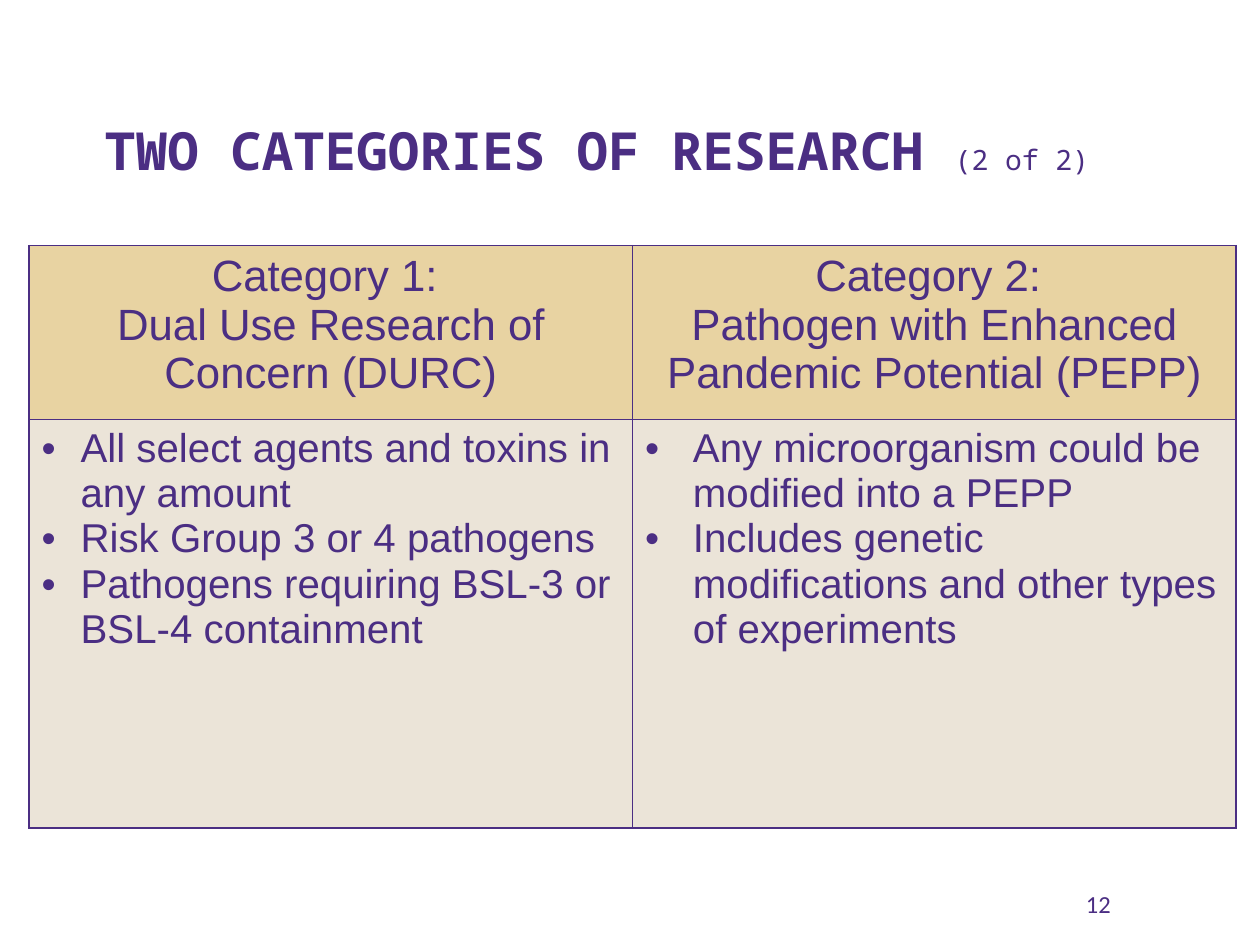
"""Build a slide that compares two categories of research in a table."""
import dataclasses

import pptx
import pptx.dml.color
import pptx.enum.text
import pptx.oxml
import pptx.oxml.ns
import pptx.util

ALIGN = pptx.enum.text.PP_ALIGN
ANCHOR = pptx.enum.text.MSO_ANCHOR


@dataclasses.dataclass(frozen=True)
class Theme:
    """Colours, fonts and type sizes of the deck."""

    ink: str = "4B2E83"
    header_fill: str = "E8D3A2"
    body_fill: str = "EBE4D8"
    title_font: str = "Noto Sans Mono"
    table_font: str = "Arial"
    number_font: str = "Calibri"
    title_size: int = 30
    part_size: int = 16
    header_size: int = 25
    body_size: int = 23
    number_size: int = 14
    border_width: int = 1


class SlideBuilder:
    """Hold the theme and current slide, placing elements on a 100 by 75 grid."""

    def __init__(self, deck, theme):
        """Add a blank slide and measure its grid."""
        self.theme = theme
        self.page = deck.slides.add_slide(deck.slide_layouts[6])
        self.column = deck.slide_width / 100
        self.row = deck.slide_height / 75

    def place(self, left, top, width, height):
        """Turn grid columns and rows into lengths."""
        across, down = self.column, self.row
        return [round(size) for size in (left * across, top * down, width * across, height * down)]

    def span(self, para, text, font, size, bold=False):
        """Add a styled run to a paragraph."""
        span = para.add_run()
        span.text = text
        formats = {"name": font, "size": pptx.util.Pt(size), "bold": bold}
        for name, value in formats.items():
            setattr(span.font, name, value)
        span.font.color.rgb = pptx.dml.color.RGBColor.from_string(self.theme.ink)

    def text(self, place, spans, anchor=ANCHOR.TOP):
        """Add a one-paragraph text box made of several spans."""
        frame = self.page.shapes.add_textbox(*self.place(*place)).text_frame
        formats = {"word_wrap": True, "vertical_anchor": anchor}
        for name, value in formats.items():
            setattr(frame, name, value)
        for span in spans:
            self.span(frame.paragraphs[0], *span)

    def bullet(self, para, indent):
        """Give a paragraph a hanging bullet."""
        properties = para._p.get_or_add_pPr()
        length = pptx.util.Inches(indent)
        for name, value in {"marL": length, "indent": -length}.items():
            properties.set(name, str(value))
        space = pptx.oxml.ns.nsdecls("a")
        for xml in (
            f'<a:buClr {space}><a:srgbClr val="{self.theme.ink}"/></a:buClr>',
            f'<a:buFont {space} typeface="{self.theme.table_font}"/>',
            f'<a:buChar {space} char="•"/>',
        ):
            properties.append(pptx.oxml.parse_xml(xml))

    def cell(self, cell, lines, fill, size, indent=None):
        """Fill a bordered cell with centred lines, or bullets when indented."""
        cell.fill.solid()
        cell.fill.fore_color.rgb = pptx.dml.color.RGBColor.from_string(fill)
        properties = cell._tc.get_or_add_tcPr()
        width = pptx.util.Pt(self.theme.border_width)
        for index, side in enumerate("LRTB"):
            properties.insert(index, pptx.oxml.parse_xml(
                f'<a:ln{side} {pptx.oxml.ns.nsdecls("a")} w="{width}"><a:solidFill>'
                f'<a:srgbClr val="{self.theme.ink}"/></a:solidFill></a:ln{side}>'))
        frame = cell.text_frame
        for index, line in enumerate(lines):
            para = frame.add_paragraph() if index else frame.paragraphs[0]
            if indent:
                self.bullet(para, indent)
            else:
                para.alignment = ALIGN.CENTER
            self.span(para, line, self.theme.table_font, size)

    def table(self, place, heights, categories):
        """Add a table with one column for each category."""
        shape = self.page.shapes.add_table(len(heights), len(categories), *self.place(*place))
        table = shape.table
        for row, height in zip(table.rows, heights):
            row.height = round(height * self.row)
        theme = self.theme
        for column, (header, points, indent) in enumerate(categories):
            self.cell(table.cell(0, column), header, theme.header_fill, theme.header_size)
            self.cell(table.cell(1, column), points, theme.body_fill, theme.body_size, indent)


CATEGORIES = [
    (
        ["Category 1: ", "Dual Use Research of Concern (DURC)"],
        [
            "All select agents and toxins in any amount",
            "Risk Group 3 or 4 pathogens",
            "Pathogens requiring BSL-3 or BSL-4 containment",
        ],
        0.31,
    ),
    (
        ["Category 2: ", "Pathogen with Enhanced Pandemic Potential (PEPP)"],
        [
            "Any microorganism could be modified into a PEPP",
            "Includes genetic modifications and other types of experiments",
        ],
        0.38,
    ),
]


def main():
    """Build and save the deck."""
    deck = pptx.Presentation()
    deck.slide_width = pptx.util.Inches(10)
    deck.slide_height = pptx.util.Inches(7.5)
    theme = Theme()
    slide = SlideBuilder(deck, theme)
    slide.text((85.2, 70.1, 4.3, 3.4), [("12", theme.number_font, theme.number_size)])
    slide.text(
        (7.3, 4.1, 89.5, 10.8),
        [
            ("TWO CATEGORIES OF RESEARCH ", theme.title_font, theme.title_size, True),
            ("(2 of 2)", theme.title_font, theme.part_size),
        ],
        ANCHOR.BOTTOM,
    )
    heights = [13.8, 32.4]
    slide.table((2.3, 19.5, 95.8, sum(heights)), heights, CATEGORIES)
    deck.save("out.pptx")


if __name__ == "__main__":
    main()
